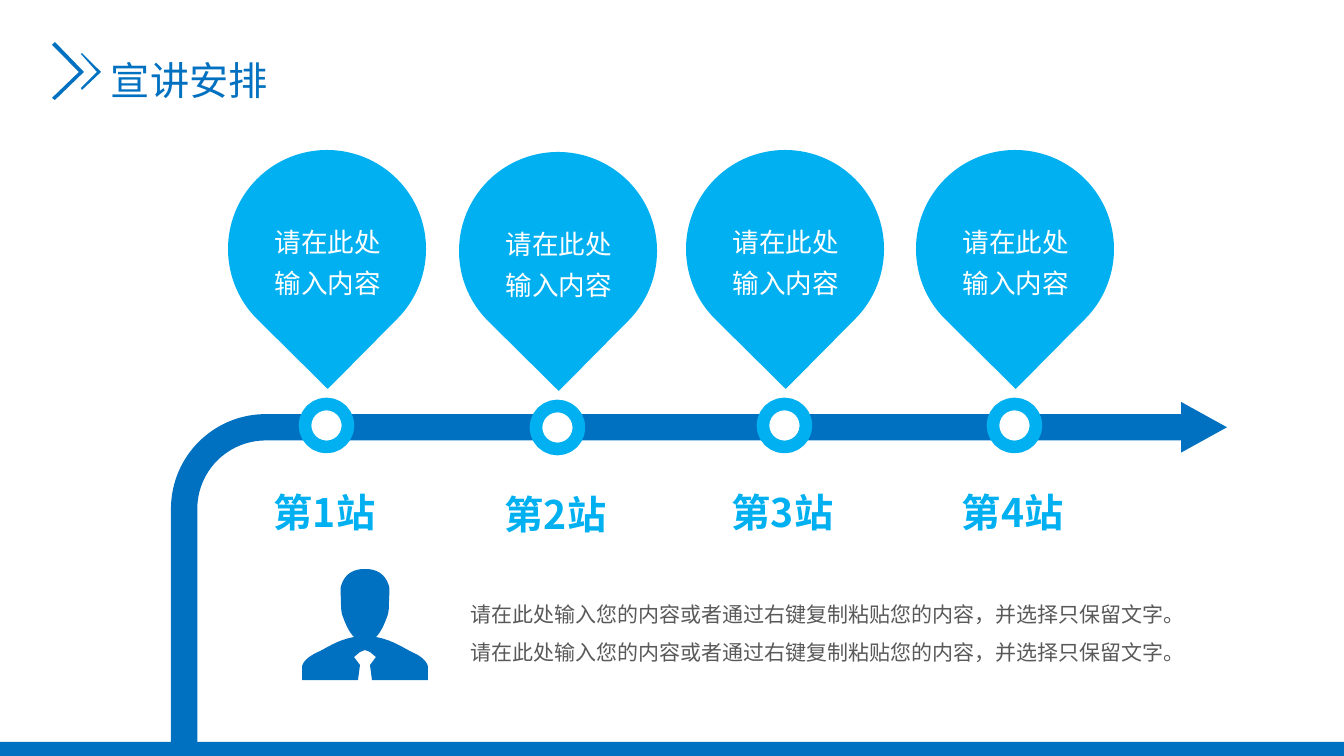
from lxml import etree
from pptx import Presentation
from pptx.dml.color import RGBColor
from pptx.enum.shapes import MSO_SHAPE
from pptx.enum.text import MSO_AUTO_SIZE
from pptx.oxml.ns import qn
from pptx.util import Pt

PX = 914400 / 100.8
RECT, OVAL = MSO_SHAPE.RECTANGLE, MSO_SHAPE.OVAL
TEARDROP, BENT_ARROW = MSO_SHAPE.TEAR, MSO_SHAPE.BENT_ARROW
GROW = MSO_AUTO_SIZE.SHAPE_TO_FIT_TEXT

THEME = {
    "blue": RGBColor(0x00, 0x70, 0xC0),
    "sky": RGBColor(0x00, 0xB0, 0xF0),
    "white": RGBColor(0xFF, 0xFF, 0xFF),
    "grey": RGBColor(0x59, 0x59, 0x59),
    "cjk": "Noto Sans CJK SC",
    "latin": "Arial",
    "heading": 28,
    "pin": 19,
    "body": 15,
}

prs = Presentation()
prs.slide_width, prs.slide_height = round(1344 * PX), round(756 * PX)
s = prs.slides.add_slide(prs.slide_layouts[6])


def paint(sp, color, box=None):
    """Flat fill without line or shadow; box is only for preset shapes."""
    sp.shadow.inherit = False
    sp.fill.solid()
    sp.fill.fore_color.rgb = THEME[color]
    sp.line.fill.background()
    return sp


def add_text(box, lines, size, color, spacing, font="cjk", bold=False, wrap=True):
    tf = s.shapes.add_textbox(*[round(v * PX) for v in box]).text_frame
    tf.word_wrap = wrap
    tf.auto_size = GROW
    tf.text = "\n".join(lines)
    for p in tf.paragraphs:
        p.line_spacing = spacing
        p.font.size = Pt(THEME[size])
        p.font.bold = bold
        p.font.color.rgb = THEME[color]
        p.font.name = THEME[font]
        props = p._p.pPr.find(qn("a:defRPr"))
        etree.SubElement(props, qn("a:ea")).set("typeface", THEME["cjk"])


# Title with double chevron
chevrons = [
    [(82, 53), (101, 72), (82, 90), (81, 88), (97, 72), (81, 54)],
    [(55, 42), (84, 72), (55, 100), (52, 98), (79, 72), (52, 45)],
]
for points in chevrons:
    builder = s.shapes.build_freeform(*points[0], scale=PX)
    builder.add_line_segments(points[1:], close=True)
    paint(builder.convert_to_shape(), "blue")
add_text((101, 28, 178, 82), ["宣讲安排"], "heading", "blue", 1.5, wrap=False)

# Footer bar and road
for preset, box in [(RECT, (0, 742, 1344, 14)), (BENT_ARROW, (171, 402, 1056, 342))]:
    sp = paint(s.shapes.add_shape(preset, *[round(v * PX) for v in box]), "blue")
for i, ratio in enumerate((0.077, 0.074, 0.134, 0.277)):
    sp.adjustments[i] = ratio

# Stations: pin, ring on the road, label below
stations = [(228, 150), (459, 152), (686, 150), (916, 150)]
for number, (x, y) in enumerate(stations, 1):
    box = (x, y, 198, 198)
    sp = paint(s.shapes.add_shape(TEARDROP, *[round(v * PX) for v in box]), "sky")
    sp.rotation = 134.7
    box = (x + 77, y + 254, 43, 43)
    sp = paint(s.shapes.add_shape(OVAL, *[round(v * PX) for v in box]), "white")
    sp.line.color.rgb = THEME["sky"]
    sp.line.width = Pt(9)
    add_text((x + 37, y + 61, 137, 94), ["请在此处", "输入内容"], "pin", "white", 1.3)
    add_text((x + 36, y + 310, 142, 82), [f"第{number}站"], "heading", "sky", 1.5, bold=True)

# Speaker figure: right half as Bezier curves around the axis, then mirrored
AXIS, STEPS = 365, 8
head_and_shoulder = [
    [(11, 569), (20, 573), (24, 586)],
    [(25, 590), (24, 597), (24, 602)],
    [(24, 607), (24, 612), (22, 617)],
    [(19, 625), (16, 632), (11, 637)],
    [(28, 640), (40, 649), (47, 652)],
    [(63, 659), (63, 667), (63, 667)],
]
half = [(0, 569)]
for b, c, d in head_and_shoulder:
    a = half[-1]
    for step in range(1, STEPS + 1):
        t = step / STEPS
        weights = ((1 - t) ** 3, 3 * t * (1 - t) ** 2, 3 * t * t * (1 - t), t ** 3)
        half.append(tuple(sum(w * q[k] for w, q in zip(weights, (a, b, c, d))) for k in (0, 1)))
half += [(63, 680), (7, 680), (5, 665), (11, 657), (5, 652), (0, 650)]
outline = half + [(-dx, y) for dx, y in reversed(half[1:-1])]
points = [((AXIS + dx) * PX, y * PX) for dx, y in outline]
builder = s.shapes.build_freeform(*points[0])
builder.add_line_segments(points[1:], close=True)
paint(builder.convert_to_shape(), "blue")

# Description
sentence = "请在此处输入您的内容或者通过右键复制粘贴您的内容，并选择只保留文字。"
add_text((461, 584, 726, 87), [sentence * 2], "body", "grey", 1.5, font="latin")

prs.save("out.pptx")
